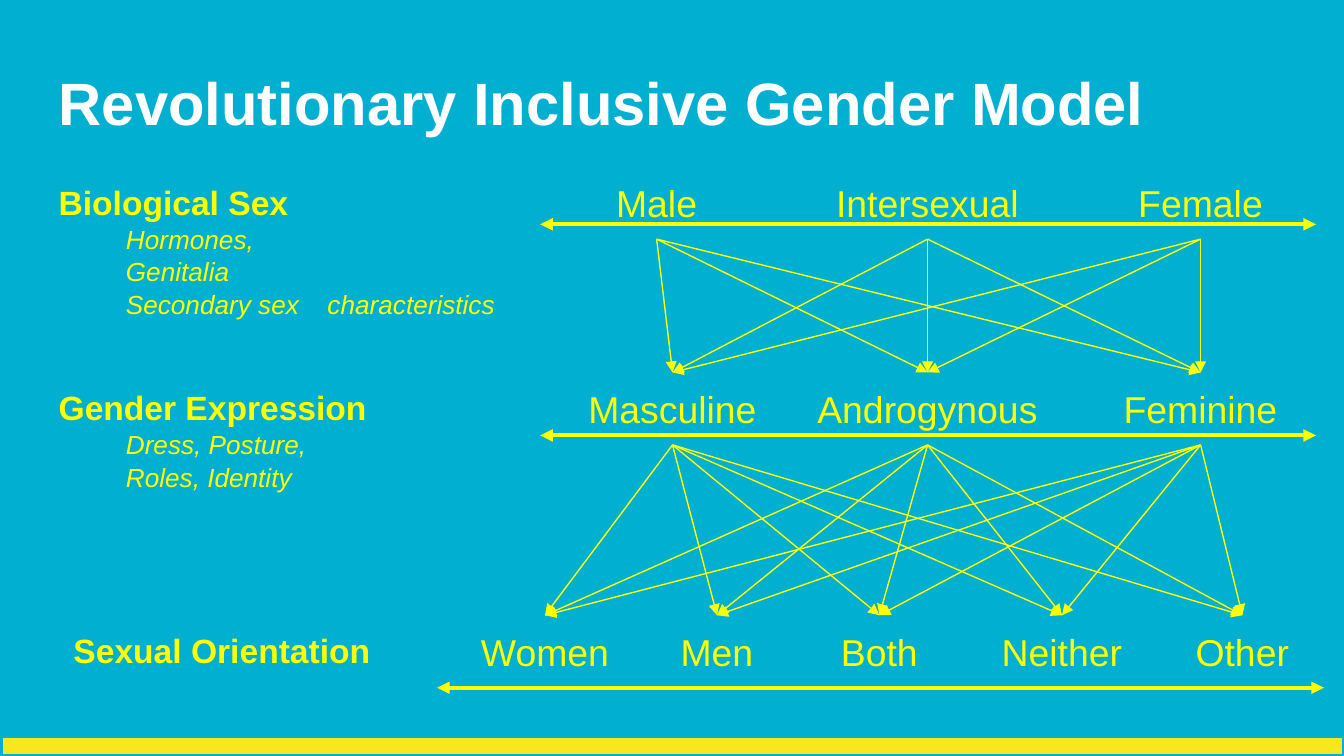
"""Build the gender model slide: three scales whose labels are fully linked."""
from itertools import product

from lxml import etree
from pptx import Presentation
from pptx.dml.color import RGBColor
from pptx.enum.shapes import MSO_CONNECTOR
from pptx.enum.text import MSO_ANCHOR, MSO_AUTO_SIZE, PP_ALIGN
from pptx.oxml.ns import qn
from pptx.util import Cm, Pt

STRAIGHT = MSO_CONNECTOR.STRAIGHT
TOP, MIDDLE, BOTTOM = MSO_ANCHOR.TOP, MSO_ANCHOR.MIDDLE, MSO_ANCHOR.BOTTOM
LEFT, CENTER = PP_ALIGN.LEFT, PP_ALIGN.CENTER
FIXED = MSO_AUTO_SIZE.NONE
BLUE = RGBColor(0x01, 0xAF, 0xD1)
WHITE = RGBColor(0xFF, 0xFF, 0xFF)
YELLOW = RGBColor(0xFF, 0xFF, 0x00)
GOLD = RGBColor(0xF8, 0xE7, 0x1C)
FONT = "Arial"
INSET = 0.25
LABEL_H = 1.37
UPPER, LOWER = 2, 0

TITLE = "Revolutionary Inclusive Gender Model"
NOTES = [
    ((0.86, 3.15, 8.84, 2.84), "Biological Sex",
     ["\tHormones,", "\tGenitalia", "\tSecondary sex \tcharacteristics"]),
    ((0.86, 7.04, 8.84, 2.84), "Gender Expression",
     ["\tDress, Posture,", "\tRoles, Identity"]),
    ((1.14, 11.63, 6.4, 1.37), "Sexual Orientation", []),
]
SCALES = [
    {"top": 3.15, "axis": (10.21, 24.87, 4.24),
     "labels": [("Male", 12.41, 4.39), ("Intersexual", 17.53, 4.93),
                ("Female", 22.69, 4.39)]},
    {"top": 7.04, "axis": (10.21, 24.87, 8.23),
     "labels": [("Masculine", 12.71, 4.39), ("Androgynous", 17.53, 4.93),
                ("Feminine", 22.69, 3.73)]},
    {"top": 11.63, "axis": (8.26, 25.02, 13),
     "labels": [("Women", 10.3, 4.39), ("Men", 13.55, 3.07),
                ("Both", 16.62, 2.77), ("Neither", 20.07, 3.45),
                ("Other", 23.48, 2.77)]},
]
FOOTER = (0.05, 25.37, 14.1)


def set_frame(frame, anchor):
    frame.word_wrap = True
    frame.auto_size = FIXED
    frame.vertical_anchor = anchor
    frame.margin_left = frame.margin_right = Cm(INSET)
    frame.margin_top = frame.margin_bottom = Cm(INSET)


def write(para, text, size, color=YELLOW, bold=False, italic=False, align=LEFT):
    para.text = text
    para.alignment = align
    for run in para.runs:
        font = run.font
        font.name, font.size = FONT, Pt(size)
        font.bold, font.italic = bold, italic
        font.color.rgb = color


def add_box(slide, place, anchor):
    box = slide.shapes.add_textbox(*map(Cm, place))
    set_frame(box.text_frame, anchor)
    return box


def add_line(slide, start, end, width, color=YELLOW, ends=()):
    line = slide.shapes.add_connector(STRAIGHT, *map(Cm, start + end))
    line.line.color.rgb = color
    line.line.width = Pt(width)
    stroke = line.line._get_or_add_ln()
    for end_tag in ends:
        etree.SubElement(stroke, qn(end_tag), type="triangle")
    etree.SubElement(line._element.spPr, qn("a:effectLst"))
    return line


def add_title(slide):
    title = slide.shapes.title
    title.left, title.top = Cm(0.86), Cm(1.04)
    title.width, title.height = Cm(23.67), Cm(1.8)
    set_frame(title.text_frame, BOTTOM)
    write(title.text_frame.paragraphs[0], TITLE, 32, WHITE, bold=True)


def add_note(slide, place, head, items):
    frame = add_box(slide, place, TOP).text_frame
    write(frame.paragraphs[0], head, 18, bold=True)
    for item in items:
        write(frame.add_paragraph(), item, 14, italic=True)
    for para in frame.paragraphs:
        para.line_spacing = 1.04


def add_scale(slide, scale):
    boxes = []
    for text, mid, width in scale["labels"]:
        place = (mid - width / 2, scale["top"], width, LABEL_H)
        box = add_box(slide, place, MIDDLE)
        write(box.text_frame.paragraphs[0], text, 20, align=CENTER)
        boxes.append(box)
    left, right, y = scale["axis"]
    add_line(slide, (left, y), (right, y), 2.25, ends=("a:headEnd", "a:tailEnd"))
    return boxes


def main():
    deck = Presentation()
    deck.slide_width, deck.slide_height = Cm(25.4), Cm(14.29)
    slide = deck.slides.add_slide(deck.slide_layouts[5])
    slide.background.fill.solid()
    slide.background.fill.fore_color.rgb = BLUE
    add_title(slide)
    for note in NOTES:
        add_note(slide, *note)
    rows = [add_scale(slide, scale) for scale in SCALES]
    for above, below in zip(rows, rows[1:]):
        for source, target in product(above, below):
            link = add_line(slide, (0, 0), (1, 1), 0.75, ends=("a:tailEnd",))
            link.begin_connect(source, UPPER)
            link.end_connect(target, LOWER)
    left, right, y = FOOTER
    add_line(slide, (left, y), (right, y), 9, GOLD)
    deck.save("out.pptx")


if __name__ == "__main__":
    main()
